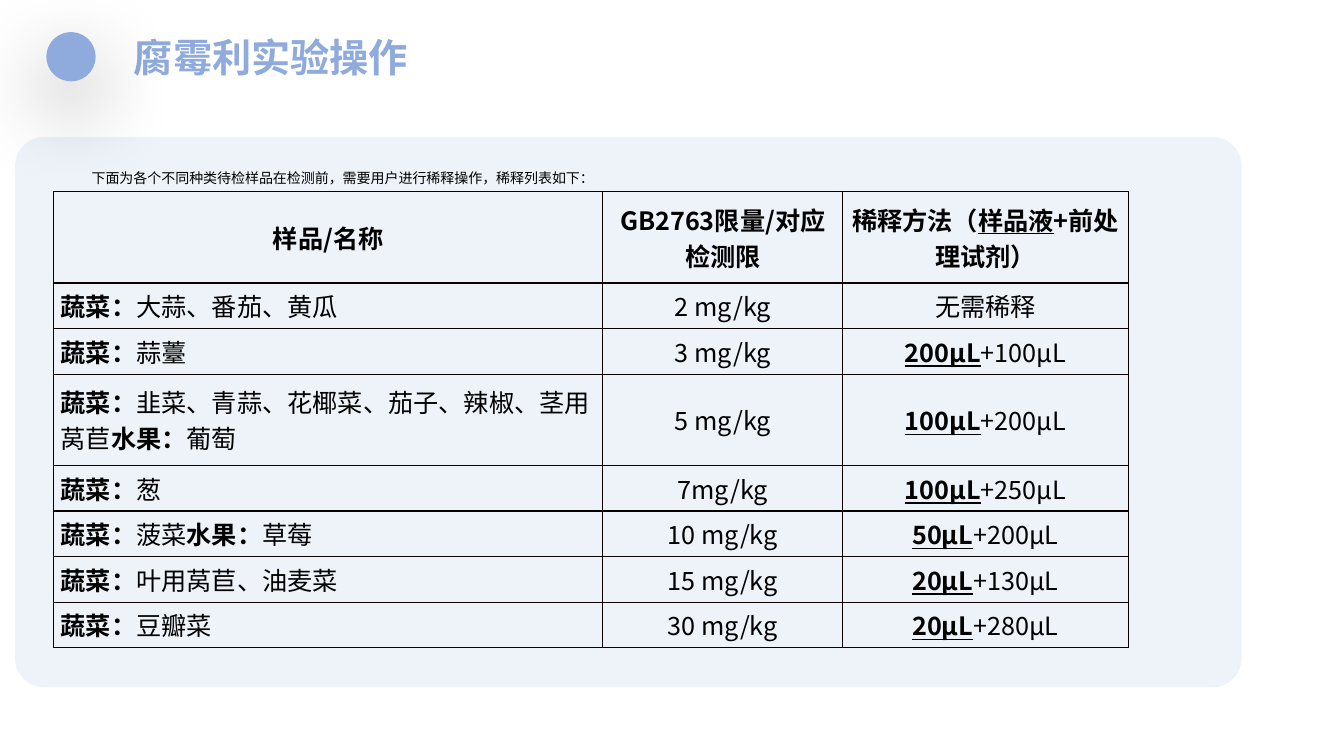
from dataclasses import dataclass

from lxml.etree import SubElement
from pptx import Presentation
from pptx.dml.color import RGBColor
from pptx.enum.shapes import MSO_SHAPE
from pptx.enum.text import MSO_ANCHOR, PP_ALIGN
from pptx.oxml import parse_xml
from pptx.oxml.ns import nsdecls, qn
from pptx.util import Cm, Pt

FONT = "Noto Sans CJK SC"
BLUE, PALE, BLACK, BORDER = "8FAADC", "EEF2F9", "000000", "080000"
COLUMN_WIDTHS = [13.84, 6.05, 7.19]
LINE_ROW, TWO_LINE_ROW = 1.15, 2.3
NOTE = "下面为各个不同种类待检样品在检测前，需要用户进行稀释操作，稀释列表如下："

# A cell is a list of (text, style): "b" is bold, "u" is underlined.
HEADINGS = [
    [("样品/名称", "b")],
    [("GB2763限量/对应检测限", "b")],
    [("稀释方法（", "b"), ("样品液", "bu"), ("+前处理试剂）", "b")],
]
# Samples by kind, limit, sample volume and reagent volume
SAMPLES = [
    ({"蔬菜：": "大蒜、番茄、黄瓜"}, "2 mg/kg", None),
    ({"蔬菜：": "蒜薹"}, "3 mg/kg", (200, 100)),
    ({"蔬菜：": "韭菜、青蒜、花椰菜、茄子、辣椒、茎用莴苣", "水果：": "葡萄"},
     "5 mg/kg", (100, 200)),
    ({"蔬菜：": "葱"}, "7mg/kg", (100, 250)),
    ({"蔬菜：": "菠菜", "水果：": "草莓"}, "10 mg/kg", (50, 200)),
    ({"蔬菜：": "叶用莴苣、油麦菜"}, "15 mg/kg", (20, 130)),
    ({"蔬菜：": "豆瓣菜"}, "30 mg/kg", (20, 280)),
]
TWO_LINE_ROWS = {0, 3}


@dataclass
class Box:
    """A rectangle in centimetres."""
    left: float
    top: float
    width: float
    height: float

    def inner(self, left, top, width, height):
        return Box(self.left + left, self.top + top, width, height)

    def lengths(self):
        return [Cm(n) for n in (self.left, self.top, self.width, self.height)]


def color(value):
    return RGBColor.from_string(value)


def add_span(para, text, size, ink=BLACK, style=""):
    span = para.add_run()
    span.text = text
    font = span.font
    font.name, font.size = FONT, Pt(size)
    font.bold, font.underline = "b" in style, "u" in style
    font.color.rgb = color(ink)
    SubElement(span._r.get_or_add_rPr(), qn("a:ea")).set("typeface", FONT)


def add_plain_shape(page, kind, box, fill):
    shape = page.shapes.add_shape(kind, *box.lengths())
    shape.shadow.inherit = False
    shape.fill.solid()
    shape.fill.fore_color.rgb = color(fill)
    shape.line.fill.background()
    return shape


def add_soft_shadow(shape):
    effects = shape._element.spPr.find(qn("a:effectLst"))
    effects.append(parse_xml(
        f'<a:outerShdw {nsdecls("a")} blurRad="{Pt(60)}" dist="{Pt(20)}" '
        'dir="5400000" algn="t" rotWithShape="0"><a:srgbClr val="000000">'
        '<a:alpha val="40000"/></a:srgbClr></a:outerShdw>'))


def add_heading(page, box):
    dot = add_plain_shape(page, MSO_SHAPE.OVAL, box.inner(0, 0.1, 1.24, 1.24), BLUE)
    add_soft_shadow(dot)
    title = page.shapes.title
    title.left, title.top, title.width, title.height = box.inner(
        1.95, 0, box.width - 1.95, box.height).lengths()
    frame = title.text_frame
    frame.word_wrap = True
    frame.vertical_anchor = MSO_ANCHOR.MIDDLE
    frame.margin_top = frame.margin_bottom = 0
    para = frame.paragraphs[0]
    para.alignment = PP_ALIGN.LEFT
    add_span(para, "腐霉利实验操作", 28, BLUE, "b")


def add_note(page, box):
    frame = page.shapes.add_textbox(*box.lengths()).text_frame
    frame.word_wrap = True
    para = frame.paragraphs[0]
    para._p.get_or_add_pPr().set("indent", str(Cm(0.71)))
    add_span(para, NOTE, 10)


def sample_cells(kinds, limit, volumes):
    names = [part for kind, name in kinds.items()
             for part in ((kind, "b"), (name, ""))]
    dilution = [("无需稀释", "")]
    if volumes:
        dilution = [(f"{volumes[0]}μL", "bu"), (f"+{volumes[1]}μL", "")]
    return [names, [(limit, "")], dilution]


def outline_cell(cell):
    properties = cell._tc.get_or_add_tcPr()
    for position, side in enumerate(("lnL", "lnR", "lnT", "lnB")):
        properties.insert(position, parse_xml(
            f'<a:{side} {nsdecls("a")} w="{Pt(1)}"><a:solidFill>'
            f'<a:srgbClr val="{BORDER}"/></a:solidFill></a:{side}>'))


def fill_cell(cell, parts, alignment):
    cell.vertical_anchor = MSO_ANCHOR.MIDDLE
    cell.margin_left = cell.margin_right = Cm(0.18)
    cell.margin_top = cell.margin_bottom = 0
    cell.fill.background()
    outline_cell(cell)
    para = cell.text_frame.paragraphs[0]
    para.alignment = alignment
    for text, style in parts:
        add_span(para, text, 18, style=style)


def add_dilution_table(page, box):
    rows = [HEADINGS] + [sample_cells(*sample) for sample in SAMPLES]
    table = page.shapes.add_table(
        len(rows), len(COLUMN_WIDTHS), *box.lengths()).table
    table.first_row = table.horz_banding = False
    for column, width in zip(table.columns, COLUMN_WIDTHS):
        column.width = Cm(width)
    for r, cells in enumerate(rows):
        table.rows[r].height = Cm(TWO_LINE_ROW if r in TWO_LINE_ROWS else LINE_ROW)
        for c, parts in enumerate(cells):
            left = r > 0 and c == 0
            fill_cell(table.cell(r, c), parts,
                      PP_ALIGN.LEFT if left else PP_ALIGN.CENTER)


def add_dilution_panel(page, box):
    panel = add_plain_shape(page, MSO_SHAPE.ROUNDED_RECTANGLE, box, PALE)
    panel.adjustments[0] = 0.053
    add_note(page, box.inner(0.97, 0.69, 24.41, 1.85))
    add_dilution_table(page, box.inner(0.97, 1.38, sum(COLUMN_WIDTHS), 11.5))


def main():
    deck = Presentation()
    deck.slide_width, deck.slide_height = Cm(33.87), Cm(19.05)
    page = deck.slides.add_slide(deck.slide_layouts[5])
    add_dilution_panel(page, Box(0.38, 3.45, 30.91, 13.87))
    add_heading(page, Box(1.17, 0.71, 14.07, 1.45))
    deck.save("out.pptx")


if __name__ == "__main__":
    main()
